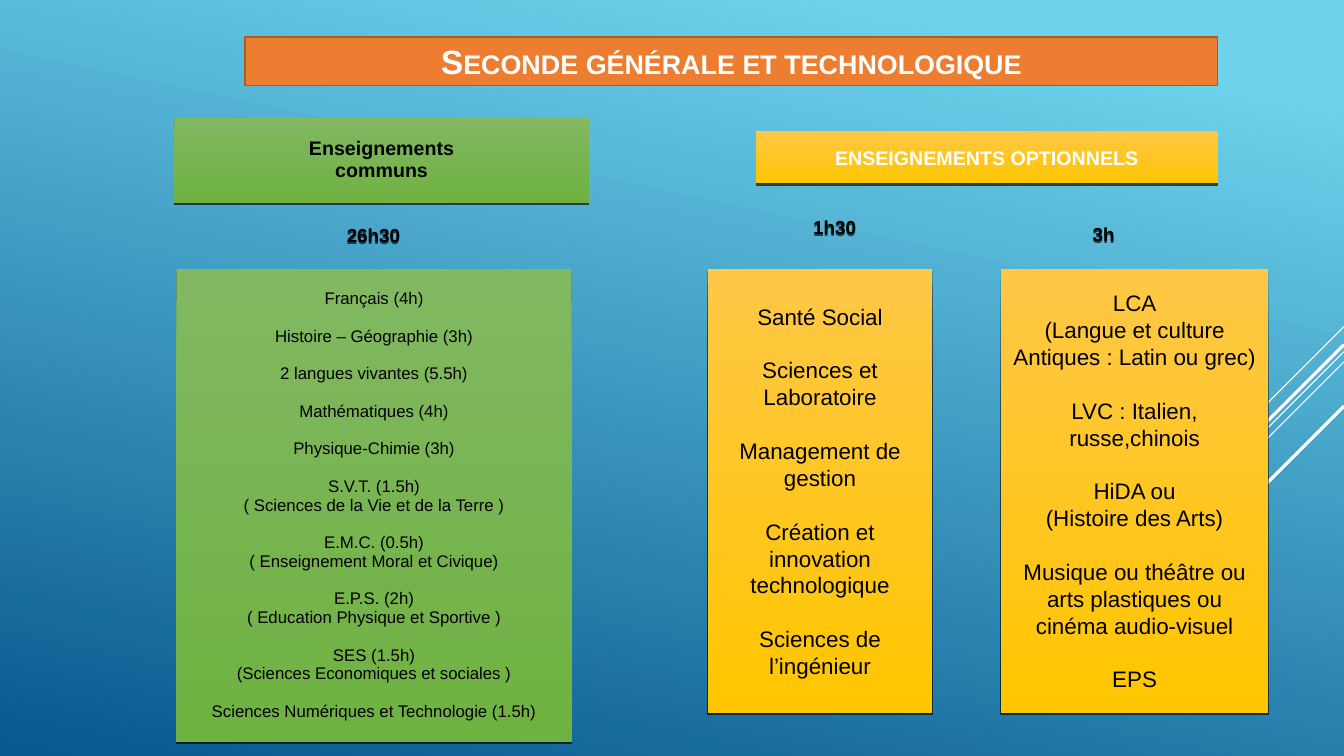
from lxml.etree import SubElement
from pptx import Presentation
from pptx.dml.color import RGBColor
from pptx.enum.shapes import MSO_CONNECTOR, MSO_SHAPE
from pptx.enum.text import MSO_ANCHOR, PP_ALIGN
from pptx.oxml.ns import qn
from pptx.util import Inches, Pt

WIDTH, HEIGHT = Inches(13.333), Inches(7.5)
GREEN = ("81B861", "6FB242")
YELLOW = ("FFC746", "FFC600")
BLACK, WHITE = "000000", "FFFFFF"
COLUMN_TOP = 35.6

# Each inner list is a block of lines, set apart from the next block.
COMMON_SUBJECTS = [
    ["Français (4h)"],
    ["Histoire – Géographie (3h)"],
    ["2 langues vivantes (5.5h)"],
    ["Mathématiques (4h)"],
    ["Physique-Chimie (3h)"],
    ["S.V.T. (1.5h)", "( Sciences de la Vie et de la Terre )"],
    ["E.M.C. (0.5h)", "( Enseignement Moral et Civique)"],
    ["E.P.S. (2h)", "( Education Physique et Sportive )"],
    ["SES (1.5h)", "(Sciences Economiques et sociales )"],
    ["Sciences Numériques et Technologie (1.5h)"],
]
SHORT_OPTIONS = [
    ["Santé Social"],
    ["Sciences et Laboratoire"],
    ["Management de gestion"],
    ["Création et innovation technologique"],
    ["Sciences de l’ingénieur"],
]
LONG_OPTIONS = [
    ["LCA", "(Langue et culture", "Antiques : Latin ou grec)"],
    ["LVC : Italien, russe,chinois"],
    ["HiDA ou", "(Histoire des Arts)"],
    ["Musique ou théâtre ou arts plastiques ou cinéma audio-visuel"],
    ["EPS"],
]


def color(hex_string):
    return RGBColor.from_string(hex_string)


def across(percent):
    return round(WIDTH * percent / 100)


def down(percent):
    return round(HEIGHT * percent / 100)


def paint_gradient(fill, stops, angle):
    """Fill with (position, colour) stops, the angle turning clockwise."""
    fill.gradient()
    fill.gradient_angle = 360 - angle
    for stop, (position, hex_string) in zip(fill.gradient_stops, stops):
        stop.position = position
        stop.color.rgb = color(hex_string)


def add_drop_shadow(shape):
    shape.shadow.inherit = False
    effects = shape._element.spPr.find(qn("a:effectLst"))
    shadow = SubElement(effects, qn("a:outerShdw"), dist=str(Pt(1.5)),
                        dir="5400000", algn="ctr", rotWithShape="0")
    shade = SubElement(shadow, qn("a:srgbClr"), val=BLACK)
    SubElement(shade, qn("a:alpha"), val="63000")


def write(shape, blocks, size, font_color=BLACK, bold=False, spacing=1.0,
          gap=0, small_caps=False, anchor=MSO_ANCHOR.MIDDLE):
    frame = shape.text_frame
    frame.word_wrap = True
    frame.vertical_anchor = anchor
    frame.margin_left = frame.margin_right = Inches(0.07)
    frame.margin_top = frame.margin_bottom = Inches(0.04)
    paragraph = None
    for block in blocks:
        for index, line in enumerate(block):
            first = paragraph is None
            paragraph = frame.paragraphs[0] if first else frame.add_paragraph()
            paragraph.alignment = PP_ALIGN.CENTER
            paragraph.line_spacing = spacing
            paragraph.space_before = Pt(gap if index == 0 and not first else 0)
            run = paragraph.add_run()
            run.text = line
            run.font.name = "Arial"
            run.font.size = Pt(size)
            run.font.bold = bold
            run.font.color.rgb = color(font_color)
            if small_caps:
                run._r.get_or_add_rPr().set("cap", "small")


def add_box(slide, left, top, width, height):
    return slide.shapes.add_shape(MSO_SHAPE.RECTANGLE, across(left), down(top),
                                  across(width), down(height))


def add_panel(slide, place, shades, blocks, size, **text_format):
    panel = add_box(slide, *place)
    paint_gradient(panel.fill, zip((0, 1), shades), 90)
    panel.line.fill.background()
    add_drop_shadow(panel)
    write(panel, blocks, size, **text_format)


def add_hours(slide, place, hours):
    label = add_box(slide, *place)
    label.fill.background()
    label.line.fill.background()
    add_drop_shadow(label)
    write(label, [[hours]], 13.5, bold=True, spacing=0.93)


def add_title(slide, text):
    title = add_box(slide, 18.23, 4.9, 72.38, 6.4)
    title.shadow.inherit = False
    title.fill.solid()
    title.fill.fore_color.rgb = color("ED7D31")
    title.line.color.rgb = color("AE5A21")
    title.line.width = Pt(1)
    write(title, [[text]], 24, font_color=WHITE, bold=True, small_caps=True,
          anchor=MSO_ANCHOR.TOP)


def add_diagonal(slide, top, reach, weight):
    """Draw a 45° line from the right edge down to the left."""
    run = across(reach)
    line = slide.shapes.add_connector(MSO_CONNECTOR.STRAIGHT, WIDTH, down(top),
                                      WIDTH - run, down(top) + run)
    line.line.color.rgb = color(WHITE)
    line.line.width = Pt(weight)
    SubElement(line._element.spPr, qn("a:effectLst"))


def main():
    presentation = Presentation()
    presentation.slide_width, presentation.slide_height = WIDTH, HEIGHT
    slide = presentation.slides.add_slide(presentation.slide_layouts[6])
    paint_gradient(slide.background.fill, [(0.1, "6ED2EB"), (1, "06588E")], 102)

    for top, reach, weight in [(43.2, 7.5, 0.75), (46.53, 24.45, 0.75),
                               (47.87, 15.5, 0.75), (45.6, 14.33, 2.25),
                               (53.73, 10.43, 2.25)]:
        add_diagonal(slide, top, reach, weight)

    add_title(slide, "Seconde générale et technologique")

    add_panel(slide, (13.13, COLUMN_TOP, 29.4, 62.53), GREEN, COMMON_SUBJECTS,
              12, spacing=0.93, gap=13.4)
    add_panel(slide, (12.98, 15.6, 30.83, 11.2), GREEN,
              [["Enseignements", "communs"]], 14, bold=True, spacing=0.93)
    add_hours(slide, (19.95, 27.87, 15.68, 6.8), "26h30")

    add_panel(slide, (56.25, 17.33, 34.35, 6.93), YELLOW,
              [["ENSEIGNEMENTS OPTIONNELS"]], 14, font_color=WHITE, bold=True)
    for left, width, options in [(74.48, 19.88, LONG_OPTIONS),
                                 (52.65, 16.73, SHORT_OPTIONS)]:
        add_panel(slide, (left, COLUMN_TOP, width, 58.67), YELLOW, options,
                  16, gap=19.2)
    add_hours(slide, (77.25, 27.47, 9.75, 7.33), "3h")
    add_hours(slide, (57.23, 27.47, 9.75, 5.47), "1h30")

    presentation.save("out.pptx")


if __name__ == "__main__":
    main()
